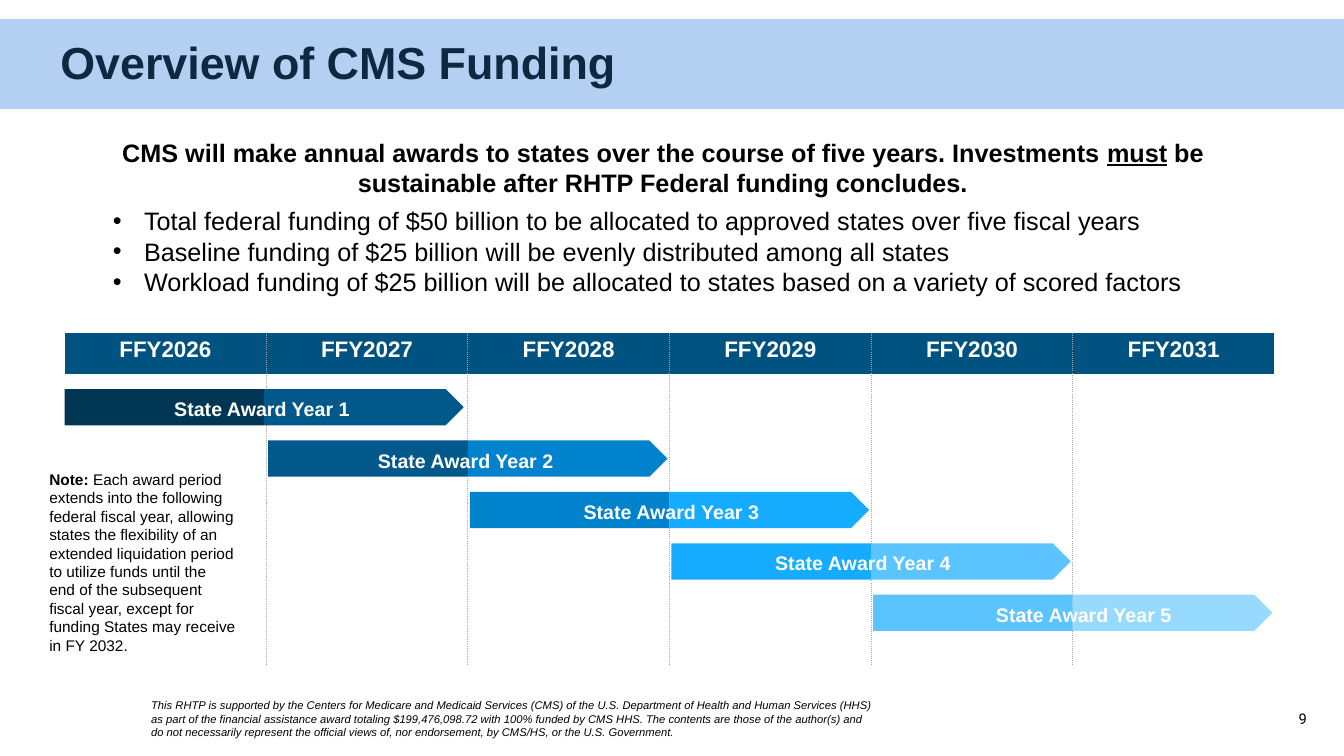
from pptx import Presentation
from pptx.dml.color import RGBColor
from pptx.enum.shapes import MSO_SHAPE
from pptx.enum.text import MSO_ANCHOR, PP_ALIGN
from pptx.oxml import parse_xml
from pptx.oxml.ns import nsdecls
from pptx.util import Pt

RECT, ARROW = MSO_SHAPE.RECTANGLE, MSO_SHAPE.PENTAGON
TOP, MID = MSO_ANCHOR.TOP, MSO_ANCHOR.MIDDLE
LEFT, CENTER, RIGHT = PP_ALIGN.LEFT, PP_ALIGN.CENTER, PP_ALIGN.RIGHT
PX = 9144
HEX = {
    "band": "B3D0F3", "title": "0E2841", "text": "000000", "white": "FFFFFF",
    "head": "005281", "rule": "A5A5A5",
    "year1": "003654", "year2": "00598A", "year3": "0083CC",
    "year4": "15ABFF", "year5": "5BC4FF", "year6": "97DAFF",
}


def rgb(name):
    return RGBColor.from_string(HEX[name])


class Deck:
    def __init__(self, wide, high):
        self.prs = Presentation()
        self.prs.slide_width, self.prs.slide_height = wide * PX, high * PX
        self.font = "Arial"
        self.slide = self.prs.slides.add_slide(self.prs.slide_layouts[6])

    def style(self, run, size, color="text", bold=False, font=None):
        run.font.name = font or self.font
        run.font.size = Pt(size)
        run.font.bold = bold
        run.font.color.rgb = rgb(color)

    def shape(self, kind, box, fill):
        item = self.slide.shapes.add_shape(kind, *[n * PX for n in box])
        item.shadow.inherit = False
        item.fill.solid()
        item.fill.fore_color.rgb = rgb(fill)
        item.line.fill.background()
        return item

    def text(self, box, words, size, color="text", bold=False, font=None,
             align=LEFT, anchor=TOP):
        item = self.slide.shapes.add_textbox(*[n * PX for n in box])
        frame = item.text_frame
        frame.word_wrap = True
        frame.vertical_anchor = anchor
        frame.text = words
        para = frame.paragraphs[0]
        para.alignment = align
        self.style(para.runs[0], size, color, bold, font)
        return para

    def bullet(self, para):
        props = para._p.get_or_add_pPr()
        props.set("marL", str(31 * PX))
        props.set("indent", str(-31 * PX))
        for body in (
            f'<a:buClr {nsdecls("a")}><a:srgbClr val="{HEX["text"]}"/></a:buClr>',
            f'<a:buFont {nsdecls("a")} typeface="Arial"/>',
            f'<a:buChar {nsdecls("a")} char="•"/>',
        ):
            props.append(parse_xml(body))

    def brief(self, box, lead, points, size):
        frame = self.shape(RECT, box, "white").text_frame
        frame.word_wrap = True
        frame.vertical_anchor = MID
        head = frame.paragraphs[0]
        head.alignment = CENTER
        for part in lead:
            run = head.add_run()
            run.text = part
            self.style(run, size, bold=True)
            run.font.underline = part == "must"
        for i, point in enumerate(points):
            para = frame.add_paragraph()
            para.text = point
            para.alignment = LEFT
            para.space_before = Pt(0 if i else 6)
            self.bullet(para)
            self.style(para.runs[0], size)

    def border(self, cell, dotted):
        props = cell._tc.get_or_add_tcPr()
        for i, side in enumerate("LRTB"):
            paint = "<a:noFill/>"
            if side in dotted:
                paint = (f'<a:solidFill><a:srgbClr val="{HEX["rule"]}"/></a:solidFill>'
                         '<a:prstDash val="sysDot"/>')
            props.insert(i, parse_xml(
                f'<a:ln{side} {nsdecls("a")} w="9525">{paint}</a:ln{side}>'))

    def grid(self, box, heads, rows):
        frame = self.slide.shapes.add_table(
            len(rows), len(heads), *[n * PX for n in box])
        table = frame.table
        for r, high in enumerate(rows):
            table.rows[r].height = high * PX
            for c, head in enumerate(heads):
                cell = table.cell(r, c)
                cell.fill.solid()
                cell.fill.fore_color.rgb = rgb("white" if r else "head")
                sides = ("L" if c else "") + ("R" if c < len(heads) - 1 else "")
                self.border(cell, sides)
                if r == 0:
                    cell.text = head
                    para = cell.text_frame.paragraphs[0]
                    para.alignment = CENTER
                    self.style(para.runs[0], 16, "white", True)


def main():
    deck = Deck(1333, 750)
    deck.shape(RECT, (0, 19, 1333, 89), "band")
    foot = deck.text(
        (140, 688, 742, 50),
        "This RHTP is supported by the Centers for Medicare and Medicaid Services (CMS) "
        "of the U.S. Department of Health and Human Services (HHS) as part of the "
        "financial assistance award totaling $199,476,098.72 with 100% funded by CMS HHS. "
        "The contents are those of the author(s) and do not necessarily represent the "
        "official views of, nor endorsement, by CMS/HS, or the U.S. Government.", 8)
    foot.runs[0].font.italic = True
    title = deck.text((50, 19, 1261, 90), "Overview of CMS Funding", 32, "title",
                      True, anchor=MID)
    title.line_spacing = 0.9
    deck.text((995, 693, 311, 40), "9", 10.5, font="Roboto", align=RIGHT, anchor=MID)

    deck.brief(
        (102, 123, 1111, 184),
        ["CMS will make annual awards to states over the course of five years. Investments ",
         "must", " be sustainable after RHTP Federal funding concludes."],
        ["Total federal funding of $50 billion to be allocated to approved states over five fiscal years",
         "Baseline funding of $25 billion will be evenly distributed among all states",
         "Workload funding of $25 billion will be allocated to states based on a variety of scored factors"],
        18)

    deck.grid((64, 330, 1200, 331), [f"FFY{y}" for y in range(2026, 2032)], [41, 290])

    bars = [(64, 163), (266, 365), (466, 569), (666, 759), (866, 978)]
    for i, (left, label) in enumerate(bars):
        top = 386 + 51 * i
        deck.shape(RECT, (left, top, 198, 36), f"year{i + 1}")
        deck.shape(ARROW, (left + 198, top, 198, 36), f"year{i + 2}")
        deck.text((label, top + 3, 230, 34), f"State Award Year {i + 1}", 14, "white", True)

    note = deck.text((39, 461, 205, 195), "Note: ", 11, bold=True)
    body = note.add_run()
    body.text = (
        "Each award period extends into the following federal fiscal year, allowing "
        "states the flexibility of an extended liquidation period to utilize funds until "
        "the end of the subsequent fiscal year, except for funding States may receive in FY 2032.")
    deck.style(body, 11)
    deck.prs.save("out.pptx")


if __name__ == "__main__":
    main()
